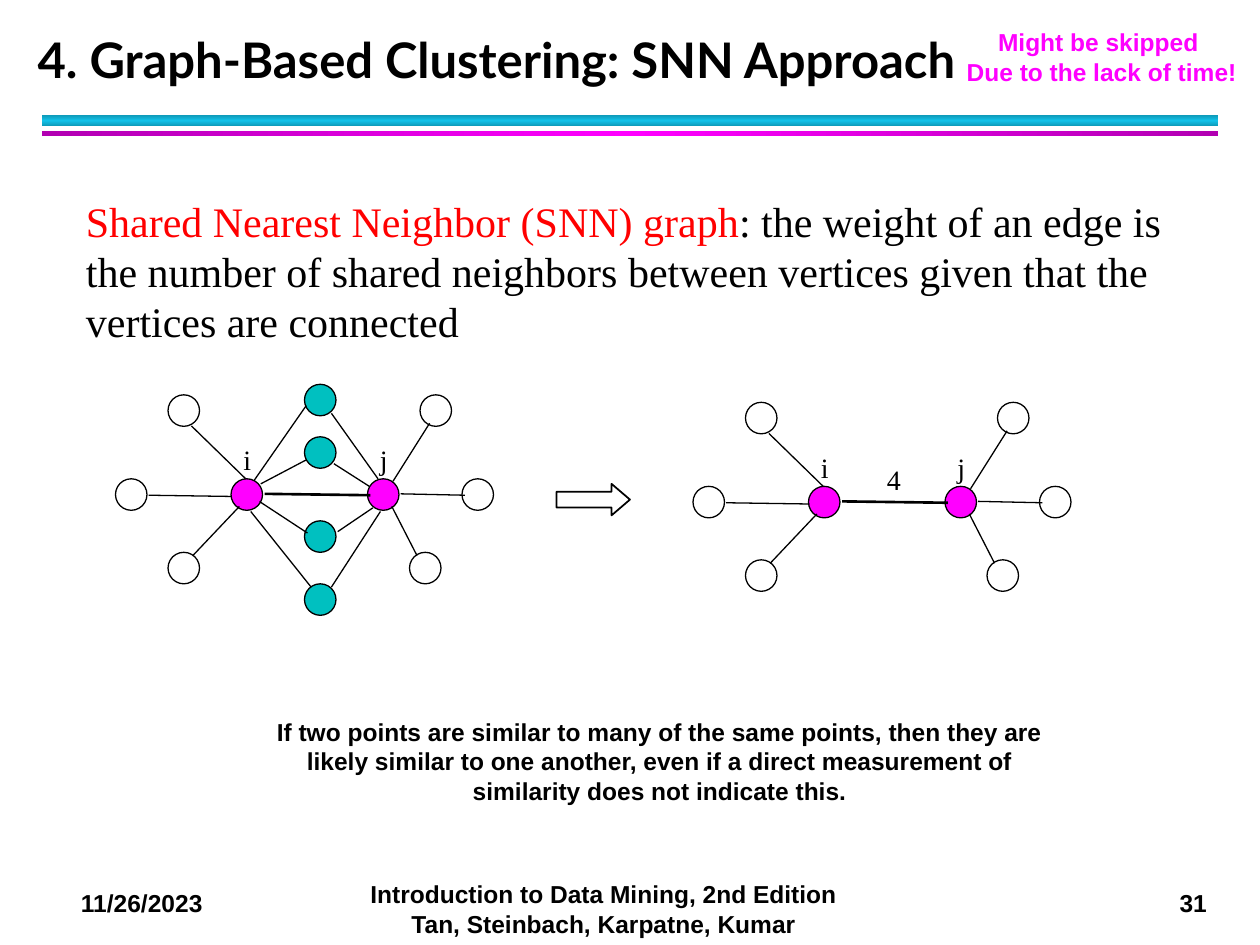
"""Build the slide on shared nearest neighbor graphs."""
from copy import deepcopy

from pptx import Presentation
from pptx import util as u
from pptx.dml.color import RGBColor
from pptx.enum import shapes, text
from pptx.oxml import ns, xmlchemy

INK = {"black": "000000", "red": "FF0000", "pink": "FF00FF", "plum": "B200B2",
       "teal": "00C0C0", "sky": "12C2E9", "sea": "0E9BBA"}
BOLD = {"name": "Arial", "size": u.Pt(14), "bold": True}
BODY = {"name": "Times New Roman", "size": u.Pt(24), "bold": False}
LABEL = {**BODY, "size": u.Pt(16)}
HEAD = {"name": "Lato", "size": u.Pt(28), "bold": True}
MID = {"alignment": text.PP_ALIGN.CENTER}
SIZE = 18
HUBS = [(132, 273.6), (210, 273.6)]
SHARED = [(174, y) for y in (219.6, 249.6, 297.6, 333.6)]
OUTER = [(96, 315.6), (66, 273.6), (96, 225.6),
         (240, 225.6), (234, 315.6), (264, 273.6)]
SPOKES = [(110.2, 317.5, 136.8, 289.4), (85, 283, 132.5, 283.7),
          (109.4, 243.4, 140.4, 273.6), (229, 282.2, 265.7, 283),
          (238.3, 317.5, 223.9, 289.4), (224.6, 275, 245.5, 241.9)]
LINKS = [(149, 276.5, 175, 262.8), (148.3, 286.6, 175.7, 304.6),
         (177.8, 335.5, 143.3, 292.3), (145.4, 274.3, 175, 231.8),
         (193, 303.8, 213.1, 290.2), (189.4, 335.5, 217.4, 292.3),
         (211, 277.9, 190.8, 265), (216, 273.6, 189.4, 236.2)]
EDGE = (151.2, 282.2, 211.7, 283)


def tint(name):
    return RGBColor.from_string(INK[name])


def style(item, vals):
    for key, val in vals.items():
        setattr(item, key, val)


def pts(*nums):
    return [u.Pt(round(n, 2)) for n in nums]


def write(tree, box, paras, font, para=None, frame=None):
    item = tree.add_textbox(*pts(*box)).text_frame
    style(item, {"word_wrap": True, **(frame or {})})
    for num, runs in enumerate(paras):
        line = item.add_paragraph() if num else item.paragraphs[0]
        style(line, para or {})
        for words, hue in runs:
            run = line.add_run()
            run.text = words
            style(run.font, font)
            run.font.color.rgb = tint(hue)


def shape(tree, kind, box, hue=None, width=0.75):
    item = tree.add_shape(kind, *pts(*box))
    item.shadow.inherit = False
    if hue:
        item.fill.solid()
        item.fill.fore_color.rgb = tint(hue)
    else:
        item.fill.background()
    item.line.color.rgb = tint("black")
    item.line.width = u.Pt(width)
    return item


def band(tree, box, rim, core, angle):
    item = shape(tree, shapes.MSO_SHAPE.RECTANGLE, box)
    item.line.fill.background()
    item.fill.gradient()
    item.fill.gradient_angle = angle
    stops = item._element.spPr.find(ns.qn("a:gradFill")).find(ns.qn("a:gsLst"))
    stops.append(deepcopy(stops[0]))
    for stop, hue, place in zip(item.fill.gradient_stops, (rim, core, rim), (0, 0.5, 1)):
        stop.color.rgb = tint(hue)
        stop.position = place


def wire(tree, ends, width=0.75):
    item = tree.add_connector(shapes.MSO_CONNECTOR.STRAIGHT, *pts(*ends))
    item.line.color.rgb = tint("black")
    item.line.width = u.Pt(width)
    xmlchemy.OxmlElement("a:effectLst")
    item._element.spPr.append(xmlchemy.OxmlElement("a:effectLst"))


def graph(slide, dx=0, dy=0, full=True):
    tree = slide.shapes.add_group_shape().shapes
    nodes = [(HUBS, "pink"), (OUTER, None)] + ([(SHARED, "teal")] if full else [])
    for spots, hue in nodes:
        for x, y in spots:
            shape(tree, shapes.MSO_SHAPE.OVAL, (x + dx, y + dy, SIZE, SIZE), hue)
    for (x, y), name in zip(HUBS, "ij"):
        write(tree, (x + dx, y + dy - 24, 24, 26.6), [[(name, "black")]], LABEL)
    for ends in SPOKES + (LINKS if full else []):
        wire(tree, [n + d for n, d in zip(ends, (dx, dy) * 2)])
    wire(tree, [n + d for n, d in zip(EDGE, (dx, dy) * 2)], 1.5)
    if not full:
        write(tree, (499.7, 260.6, 26.6, 26.6), [[("4", "black")]], LABEL)


def main():
    deck = Presentation()
    style(deck, {"slide_width": u.Pt(720), "slide_height": u.Pt(540)})
    slide = deck.slides.add_slide(deck.slide_layouts[6])
    tree = slide.shapes
    band(tree, (24, 66, 672, 6), "sea", "sky", 90)
    band(tree, (24, 75, 672, 3), "plum", "pink", 0)
    write(tree, (33, 504, 96, 24.5), [[("11/26/2023", "black")]], BOLD, MID)
    write(tree, (666, 504, 31.7, 24.5), [[("31", "black")]], BOLD, MID, {"word_wrap": False})
    write(tree, (198, 499, 294, 41), [[("Introduction to Data Mining, 2nd Edition "
          "Tan, Steinbach, Karpatne, Kumar", "black")]], BOLD, MID)
    graph(slide)
    graph(slide, 330, 4.3, False)
    write(tree, (42, 108, 636, 93.6), [[
        ("Shared Nearest Neighbor (SNN) graph", "red"),
        (": the weight of an edge is the number of shared neighbors between "
         "vertices given that the vertices are connected", "black")]], BODY)
    write(tree, (14.4, 12.2, 680.4, 41.8),
          [[("4. Graph-Based Clustering: SNN Approach", "black")]], HEAD,
          {"line_spacing": u.Pt(36)}, {"vertical_anchor": text.MSO_ANCHOR.BOTTOM})
    arrow = shape(tree, shapes.MSO_SHAPE.RIGHT_ARROW, (318, 276.5, 42, 18), width=1)
    arrow.adjustments[1] = 0.583
    write(tree, (144, 406, 466, 58.3), [[(
        "If two points are similar to many of the same points, then they are "
        "likely similar to one another, even if a direct measurement of "
        "similarity does not indicate this.", "black")]], BOLD, MID)
    write(tree, (545, 12.2, 169.2, 41), [[("Might be skipped ", "pink")],
          [("Due to the lack of time!", "pink")]], BOLD, MID, {"word_wrap": False})
    deck.save("out.pptx")


if __name__ == "__main__":
    main()
